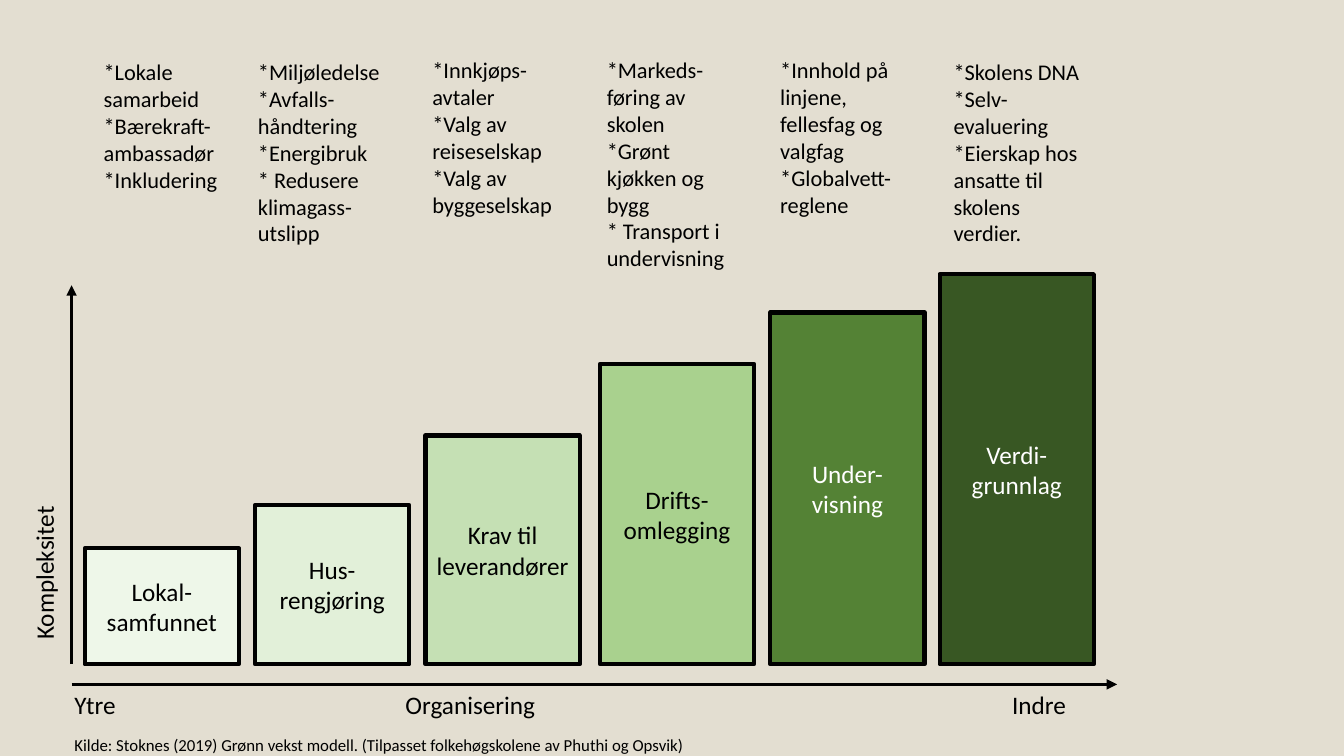
from lxml import etree
from pptx import Presentation
from pptx import util as u
from pptx.dml import color
from pptx.enum import shapes, text
from pptx.oxml import ns

INK, PAPER = "000000", "FFFFFF"
BAR_WIDTH, BASELINE, AXIS_X, AXIS_Y = 1.53, 6.59, 0.71, 6.79
LEFT, CENTER = text.PP_ALIGN.LEFT, text.PP_ALIGN.CENTER

STEPS = [
    {"label": "Lokal-samfunnet", "bar": (0.84, 5.44), "fill": "EEF7E9", "ink": INK,
     "notes_at": (0.93, 0.53, 1.45),
     "notes": ["*Lokale samarbeid", "*Bærekraft-ambassadør", "*Inkludering"]},
    {"label": "Hus-rengjøring", "bar": (2.53, 5.01), "fill": "E2F0D9", "ink": INK,
     "notes_at": (2.46, 0.53, 1.99),
     "notes": ["*Miljøledelse", "*Avfalls-håndtering", "*Energibruk",
               "* Redusere klimagass-utslipp"]},
    {"label": "Krav til leverandører", "bar": (4.22, 4.32), "fill": "C5E0B4", "ink": INK,
     "notes_at": (4.19, 0.51, 1.72),
     "notes": ["*Innkjøps-avtaler", "*Valg av reiseselskap", "*Valg av byggeselskap"]},
    {"label": "Drifts-omlegging", "bar": (5.95, 3.61), "fill": "A9D18E", "ink": INK,
     "notes_at": (5.92, 0.51, 2.52),
     "notes": ["*Markeds-føring av skolen", "*Grønt kjøkken og bygg",
               "* Transport i undervisning"]},
    {"label": "Under-visning", "bar": (7.64, 3.1), "fill": "548235", "ink": PAPER,
     "notes_at": (7.64, 0.51, 1.72),
     "notes": ["*Innhold på linjene, fellesfag og valgfag", "*Globalvett-reglene"]},
    {"label": "Verdi-grunnlag", "bar": (9.32, 2.72), "fill": "385723", "ink": PAPER,
     "notes_at": (9.36, 0.53, 1.99),
     "notes": ["*Skolens DNA", "*Selv-evaluering",
               "*Eierskap hos ansatte til skolens verdier."]},
]


def rgb(value):
    """Return the colour for a hex string."""
    return color.RGBColor.from_string(value)


def inches(*lengths):
    """Convert several lengths to inches."""
    return [u.Inches(length) for length in lengths]


def write(frame, lines, size, ink=INK, align=LEFT):
    """Fill a text frame with one paragraph per line."""
    frame.word_wrap = True
    for index, line in enumerate(lines):
        paragraph = frame.add_paragraph() if index else frame.paragraphs[0]
        paragraph.alignment = align
        run = paragraph.add_run()
        run.text = line
        run.font.color.rgb = rgb(ink)
        for attribute, value in {"name": "Calibri", "size": u.Pt(size)}.items():
            setattr(run.font, attribute, value)


def add_label(slide, box, lines, size=18, align=LEFT, rotation=0):
    """Place a text box that grows with its text."""
    label = slide.shapes.add_textbox(*inches(*box))
    label.rotation = rotation
    label.text_frame.auto_size = text.MSO_AUTO_SIZE.SHAPE_TO_FIT_TEXT
    write(label.text_frame, lines, size, align=align)


def add_bar(slide, box, step):
    """Draw one labelled step of the staircase."""
    bar = slide.shapes.add_shape(shapes.MSO_SHAPE.RECTANGLE, *inches(*box))
    bar.shadow.inherit = False
    bar.fill.solid()
    bar.fill.fore_color.rgb = rgb(step["fill"])
    bar.line.color.rgb = rgb(INK)
    bar.line.width = u.Pt(3)
    bar.text_frame.vertical_anchor = text.MSO_ANCHOR.MIDDLE
    write(bar.text_frame, [step["label"]], 18, step["ink"], CENTER)


def add_axis(slide, start, end):
    """Draw an axis with an arrowhead at its end."""
    axis = slide.shapes.add_connector(
        shapes.MSO_CONNECTOR.STRAIGHT, *inches(*start, *end))
    axis.line.color.rgb = rgb(INK)
    axis.line.width = u.Pt(2.5)
    etree.SubElement(axis.line._get_or_add_ln(), ns.qn("a:tailEnd"), type="triangle")
    etree.SubElement(axis._element.spPr, ns.qn("a:effectLst"))


def add_staircase(slide):
    """Place each step with its notes above it."""
    for step in STEPS:
        left, top = step["bar"]
        add_bar(slide, (left, top, BAR_WIDTH, BASELINE - top), step)
        notes_left, notes_top, notes_height = step["notes_at"]
        add_label(slide, (notes_left, notes_top, BAR_WIDTH, notes_height),
                  step["notes"], size=16)


def add_axes(slide):
    """Draw both axes with their labels."""
    add_axis(slide, (AXIS_X, BASELINE), (AXIS_X, 2.83))
    add_axis(slide, (AXIS_X, AXIS_Y), (11.08, AXIS_Y))
    add_label(slide, (-0.55, 5.26, 1.97, 0.4), ["Kompleksitet"], rotation=270)
    for label, left, width, align in [("Ytre", 0.64, 0.93, LEFT),
                                      ("Organisering", 3.68, 1.97, CENTER),
                                      ("Indre", 9.94, 0.9, LEFT)]:
        add_label(slide, (left, AXIS_Y, width, 0.4), [label], align=align)


def main():
    """Build and save the slide."""
    deck = Presentation()
    deck.slide_width, deck.slide_height = inches(13.33, 7.5)
    slide = deck.slides.add_slide(deck.slide_layouts[6])
    slide.background.fill.solid()
    slide.background.fill.fore_color.rgb = rgb("E3DED1")
    add_staircase(slide)
    add_axes(slide)
    source = ("Kilde: Stoknes (2019) Grønn vekst modell. "
              "(Tilpasset folkehøgskolene av Phuthi og Opsvik)")
    add_label(slide, (0.64, 7.24, 6.54, 0.3), [source], size=12)
    deck.save("out.pptx")


if __name__ == "__main__":
    main()
